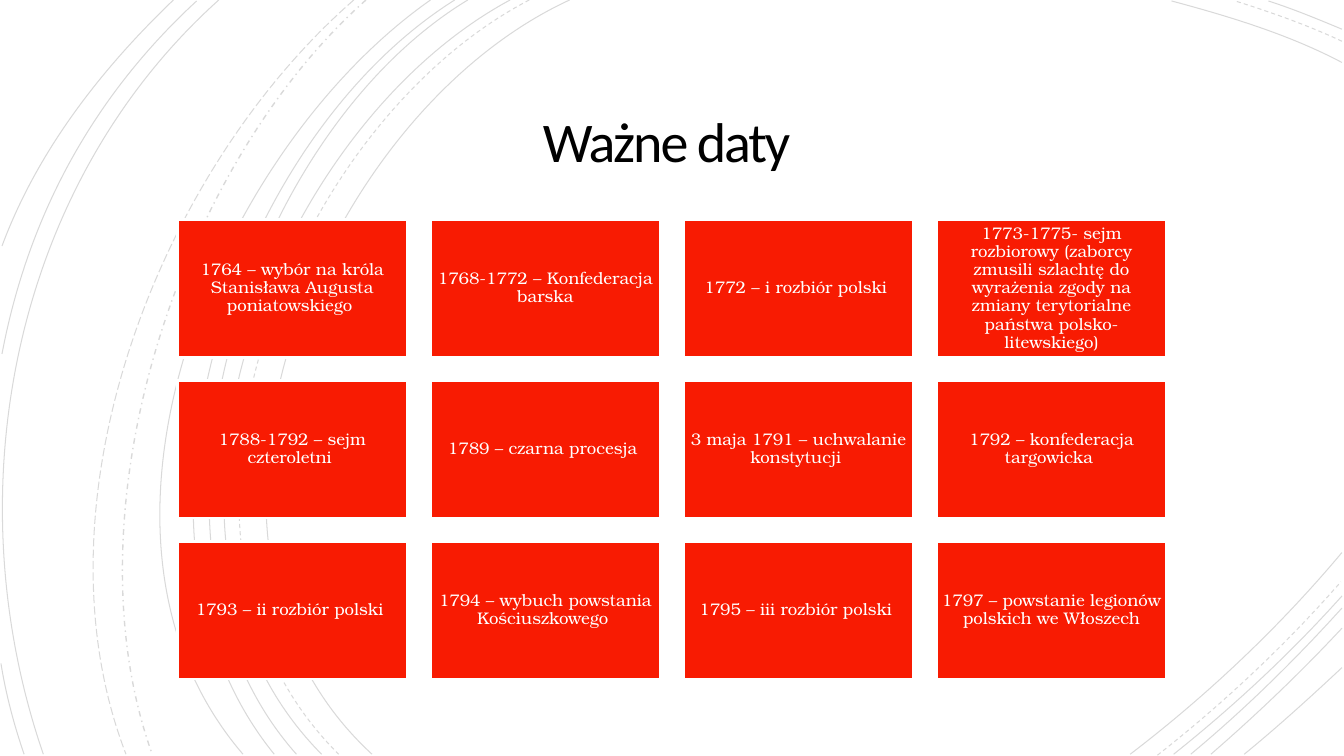
from collections import namedtuple

from lxml.etree import SubElement
from pptx import Presentation
from pptx.dml.color import RGBColor
from pptx.enum.dml import MSO_LINE
from pptx.enum.shapes import MSO_SHAPE
from pptx.enum.text import MSO_ANCHOR, MSO_AUTO_SIZE, PP_ALIGN
from pptx.oxml.ns import qn
from pptx.util import Cm, Pt

Box = namedtuple("Box", "left top width height")

BLACK, WHITE, RED = "000000", "FFFFFF", "F81B02"
COLUMNS, ROWS = 4, 3
ARC_SPAN = 13.33
ARCS = [
    (MSO_LINE.SOLID, 0.75, [
        [(5.65, 0), (3.15, 1.15), (1.43, 5.4), (3.69, 7.48)],
        [(13.31, 0.62), (12.78, 0.34), (12.18, 0.16), (11.62, 0.01)],
        [(11.21, 7.48), (11.97, 6.9), (12.69, 6.22), (13.31, 5.48)],
        [(5.06, 0), (2.7, 1.27), (1.1, 5.37), (3.19, 7.48)],
        [(13.31, 0.29), (13.07, 0.19), (12.83, 0.09), (12.58, 0.01)],
        [(11.64, 7.48), (12.23, 7.01), (12.8, 6.48), (13.31, 5.91)],
        [(4.64, 0), (2.44, 1.33), (1.1, 5.41), (2.94, 7.48)],
        [(11.81, 7.48), (12.34, 7.04), (12.84, 6.55), (13.31, 6.03)],
        [(4.51, 0), (2.31, 1.38), (0.97, 5.33), (2.72, 7.48)],
        [(12.01, 7.48), (12.46, 7.09), (12.9, 6.67), (13.31, 6.23)],
        [(4.27, 0), (2.17, 1.47), (0.53, 5.29), (2.41, 7.48)],
        [(12.34, 7.48), (12.67, 7.21), (12.99, 6.92), (13.31, 6.62)],
        [(2.17, 0), (0.11, 1.85), (-0.46, 4.9), (0.43, 7.48)],
        [(1.95, 0.01), (0.92, 0.96), (0.28, 2.14), (0.02, 3.51)],
        [(0.01, 6.58), (0.06, 6.89), (0.14, 7.19), (0.24, 7.48)],
        [(1.72, 0), (1, 0.69), (0.37, 1.5), (0.02, 2.44)],
    ]),
    (MSO_LINE.DASH, 0.75, [
        [(5.25, 0), (2.85, 1.25), (1.23, 5.37), (3.36, 7.48)],
        [(13.31, 0.41), (12.97, 0.25), (12.6, 0.12), (12.25, 0.01)],
        [(11.48, 7.49), (12.13, 6.98), (12.75, 6.4), (13.3, 5.77)],
    ]),
    (MSO_LINE.DASH_DOT, 1, [
        [(3.63, 0), (1.76, 1.66), (0.65, 5.09), (1.51, 7.48)],
    ]),
    (MSO_LINE.LONG_DASH, 0.75, [
        [(3.51, 0), (1.57, 1.69), (0.29, 4.99), (1.25, 7.48)],
    ]),
]
DATES = [
    "1764 – wybór na króla Stanisława Augusta poniatowskiego ",
    "1768-1772 – Konfederacja barska",
    "1772 – i rozbiór polski ",
    "1773-1775- sejm rozbiorowy (zaborcy zmusili szlachtę do wyrażenia "
    "zgody na zmiany terytorialne państwa polsko-litewskiego)",
    "1788-1792 – sejm czteroletni ",
    "1789 – czarna procesja ",
    "3 maja 1791 – uchwalanie konstytucji ",
    "1792 – konfederacja targowicka ",
    "1793 – ii rozbiór polski ",
    "1794 – wybuch powstania Kościuszkowego ",
    "1795 – iii rozbiór polski ",
    "1797 – powstanie legionów polskich we Włoszech",
]


def color(value):
    return RGBColor.from_string(value)


def write_text(shape, text, font, size, shade, spacing, inset):
    frame = shape.text_frame
    frame.text = text
    frame.word_wrap = True
    frame.auto_size = MSO_AUTO_SIZE.NONE
    frame.vertical_anchor = MSO_ANCHOR.MIDDLE
    frame.margin_left = frame.margin_right = inset
    frame.margin_top = frame.margin_bottom = inset
    para = frame.paragraphs[0]
    para.alignment = PP_ALIGN.CENTER
    para.line_spacing = spacing
    span = para.runs[0]
    span.font.name = font
    span.font.size = Pt(size)
    span.font.color.rgb = color(shade)
    return span


def bend(arc):
    segments = arc.element.xpath(".//a:lnTo")
    outline = segments[0].getparent()
    curve = SubElement(outline, qn("a:cubicBezTo"))
    for segment in segments:
        curve.append(segment[0])
        outline.remove(segment)


def draw_arcs(page, box):
    group = page.shapes.add_group_shape()
    unit = box.width / ARC_SPAN
    for dash, weight, curves in ARCS:
        for controls in curves:
            points = [
                (round(box.left + x * unit), round(box.top + y * unit))
                for x, y in controls
            ]
            builder = group.shapes.build_freeform(*points[0])
            builder.add_line_segments(points[1:], close=False)
            arc = builder.convert_to_shape()
            bend(arc)
            arc.shadow.inherit = False
            arc.fill.background()
            arc.line.color.rgb = color(BLACK)
            arc.line.width = Pt(weight)
            arc.line.dash_style = dash
            ink = arc.element.xpath(".//a:ln//a:srgbClr")[0]
            SubElement(ink, qn("a:alpha"), val="15000")


def place_title(page, box):
    title = page.shapes.title
    title.left, title.top, title.width, title.height = box
    span = write_text(title, "Ważne daty ", "Calibri", 40, BLACK, 0.85, Cm(0.64))
    span.font._element.set("spc", "-150")
    title.element.getparent().append(title.element)


def place_dates(page, box):
    group = page.shapes.add_group_shape()
    gap = Cm(0.58)
    width = (box.width - (COLUMNS - 1) * gap) // COLUMNS
    height = (box.height - (ROWS - 1) * gap) // ROWS
    for index, date in enumerate(DATES):
        row, column = divmod(index, COLUMNS)
        card = group.shapes.add_shape(
            MSO_SHAPE.RECTANGLE,
            box.left + column * (width + gap),
            box.top + row * (height + gap),
            width,
            height,
        )
        card.shadow.inherit = False
        card.fill.solid()
        card.fill.fore_color.rgb = color(RED)
        card.line.color.rgb = color(WHITE)
        card.line.width = Pt(2)
        write_text(card, date, "TeX Gyre Bonum", 12, WHITE, 0.9, Cm(0.13))


def main():
    deck = Presentation()
    deck.slide_width, deck.slide_height = Cm(33.87), Cm(19.05)
    page = deck.slides.add_slide(deck.slide_layouts[5])
    page.background.fill.solid()
    page.background.fill.fore_color.rgb = color(WHITE)
    draw_arcs(page, Box(0, 0, deck.slide_width, deck.slide_height))
    place_title(page, Box(Cm(4.88), Cm(2.21), Cm(24.1), Cm(2.92)))
    place_dates(page, Box(Cm(4.47), Cm(5.53), Cm(24.93), Cm(11.58)))
    deck.save("out.pptx")


if __name__ == "__main__":
    main()
